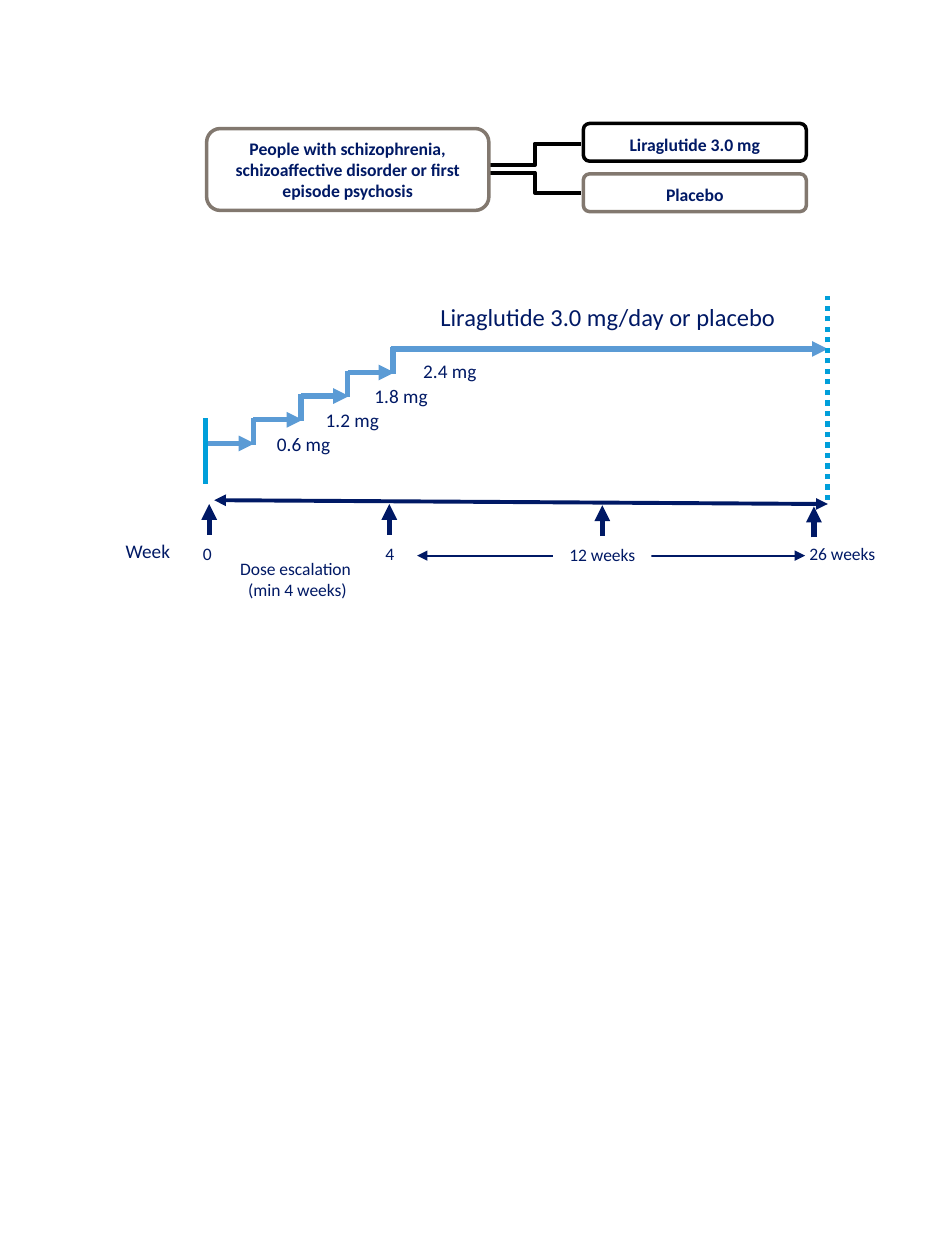
from pptx import Presentation
from pptx.dml.color import RGBColor
from pptx.enum.dml import MSO_LINE
from pptx.enum.shapes import MSO_CONNECTOR, MSO_SHAPE
from pptx.enum.text import MSO_ANCHOR, PP_ALIGN
from pptx.oxml import parse_xml
from pptx.oxml.ns import nsdecls
from pptx.util import Inches, Pt

COLORS = {"navy": "001965", "step": "5B9BD5", "cyan": "009FDA",
          "taupe": "82786F", "black": "000000", "white": "FFFFFF"}
COLUMNS, ROWS = 75, 100

POPULATION = ("People with schizophrenia, schizoaffective disorder or first "
              "episode psychosis")
ARMS = [("Liraglutide 3.0 mg", "black"), ("Placebo", "taupe")]
BRANCHES = [(13.1, 11.4), (13.7, 15.3)]
DOSES = ["0.6 mg", "1.2 mg", "1.8 mg", "2.4 mg"]
MAINTENANCE = "Liraglutide 3.0 mg/day or placebo"
ESCALATION = ["Dose escalation", " (min 4 weeks)"]
MIDPOINT = "12 weeks"
WEEKS = [("0", 9.8, 42.5, 13.3, 2.8, "white"),
         ("4", 24.3, 42.5, 13.3, 2.8, "white"),
         (MIDPOINT, 43.9, 42.6, 7.8, 4.5, "white"),
         ("26 weeks", 60.2, 42.5, 13.3, 2.8, None)]
VISITS = [(16.6, 40), (30.9, 40), (47.8, 40.1), (64.6, 40.2)]
STAIR_X = [16.1, 20.1, 23.9, 27.6, 31.2]
STAIR_TOP, STAIR_RISE = 35.2, 1.88
END_X = 65.7

BOX = {"size": 10, "bold": False, "align": PP_ALIGN.CENTER,
       "anchor": MSO_ANCHOR.TOP, "insets": (0.1, 0.05, 0.1, 0.05)}
WEEK = {**BOX, "insets": (0.11, 0.06, 0.11, 0.06)}
ROW_TITLE = {**WEEK, "size": 11, "align": PP_ALIGN.RIGHT}
DOSE = {**BOX, "size": 11, "align": PP_ALIGN.LEFT, "anchor": MSO_ANCHOR.MIDDLE}
HEADING = {**BOX, "size": 14}
ARM = {**BOX, "size": 10.1, "bold": True, "anchor": MSO_ANCHOR.MIDDLE,
       "insets": (0.08, 0.11, 0.08, 0.08)}
GROUP = {**ARM, "insets": (0.04, 0.04, 0.04, 0.04)}

deck = Presentation()
deck.slide_width, deck.slide_height = Inches(7.5), Inches(10)
slide = deck.slides.add_slide(deck.slide_layouts[6])


def across(columns):
    return round(deck.slide_width * columns / COLUMNS)


def down(rows):
    return round(deck.slide_height * rows / ROWS)


def color(name):
    return RGBColor.from_string(COLORS[name])


def connect(x1, y1, x2, y2, stroke, width, ends=(),
            kind=MSO_CONNECTOR.STRAIGHT, dash=None):
    link = slide.shapes.add_connector(kind, across(x1), down(y1),
                                      across(x2), down(y2))
    link.line.color.rgb = color(stroke)
    link.line.width = Pt(width)
    if dash:
        link.line.dash_style = dash
    for end in ends:
        link.line._ln.append(
            parse_xml(f'<a:{end} {nsdecls("a")} type="triangle"/>'))
    link._element.spPr.append(parse_xml(f'<a:effectLst {nsdecls("a")}/>'))


def write(lines, x, y, width, height, style, fill=None, outline=None):
    place = across(x), down(y), across(width), down(height)
    if fill:
        preset = MSO_SHAPE.ROUNDED_RECTANGLE if outline else MSO_SHAPE.RECTANGLE
        box = slide.shapes.add_shape(preset, *place)
        box.shadow.inherit = False
        box.fill.solid()
        box.fill.fore_color.rgb = color(fill)
        if outline:
            box.line.color.rgb = color(outline)
            box.line.width = Pt(2)
        else:
            box.line.fill.background()
    else:
        box = slide.shapes.add_textbox(*place)
    frame = box.text_frame
    frame.word_wrap = True
    frame.vertical_anchor = style["anchor"]
    for side, inset in zip(("left", "top", "right", "bottom"), style["insets"]):
        setattr(frame, f"margin_{side}", Inches(inset))
    frame.text = "\n".join(lines)
    font_values = {"name": "Calibri", "size": Pt(style["size"]),
                   "bold": style["bold"]}
    for paragraph in frame.paragraphs:
        paragraph.alignment = style["align"]
        for run in paragraph.runs:
            for attribute, value in font_values.items():
                setattr(run.font, attribute, value)
            run.font.color.rgb = color("navy")


BOTH, FORWARD = ("headEnd", "tailEnd"), ("tailEnd",)

connect(17, 39.7, END_X, 40, "navy", 2.25, BOTH)
for label, x, y, width, height, fill in WEEKS:
    if label == MIDPOINT:
        connect(33.1, 44.1, 63.9, 44.1, "navy", 1, BOTH)
    write([label], x, y, width, height, WEEK, fill)
for x, tip in VISITS:
    connect(x, tip + 2.45, x, tip, "navy", 3, FORWARD)
write(["Week"], 8.1, 42.2, 6.5, 3, ROW_TITLE)
write(ESCALATION, 15.4, 43.8, 16.1, 4.4, BOX)

for index, dose in enumerate(DOSES):
    level = STAIR_TOP - index * STAIR_RISE
    start, stop = STAIR_X[index:index + 2]
    connect(start, level, stop + 0.1, level, "step", 3, FORWARD)
    connect(stop, level + 0.1, stop, level - STAIR_RISE - 0.15, "step", 3)
    write([dose], 21 + index * 3.87, 33.8 - index * 1.93, 7.6, 2.9, DOSE)
connect(31, 27.7, END_X, 27.7, "step", 3, FORWARD)
connect(16.3, 38.4, 16.3, 33.2, "cyan", 3)
connect(END_X, 39.7, END_X, 23.5, "cyan", 3, dash=MSO_LINE.ROUND_DOT)
write([MAINTENANCE], 33.3, 23.5, 29.9, 3.4, HEADING)

for index, (arm, outline) in enumerate(ARMS):
    write([arm], 46.3, 9.8 + index * 4, 17.7, 3, ARM, "white", outline)
for source, target in BRANCHES:
    connect(38.8, source, 46.1, target, "black", 2.25, kind=MSO_CONNECTOR.ELBOW)
write([POPULATION], 16.4, 10.2, 22.4, 6.5, GROUP, "white", "taupe")

deck.save("out.pptx")
